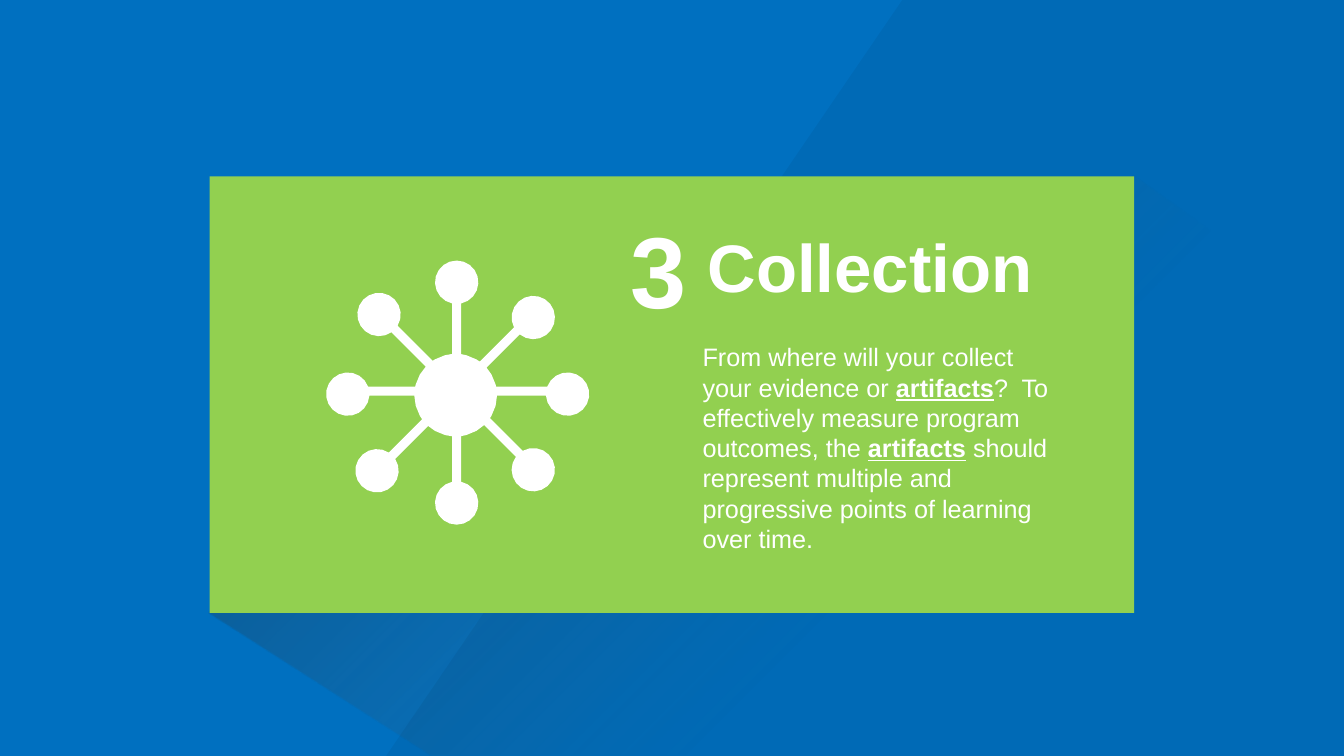
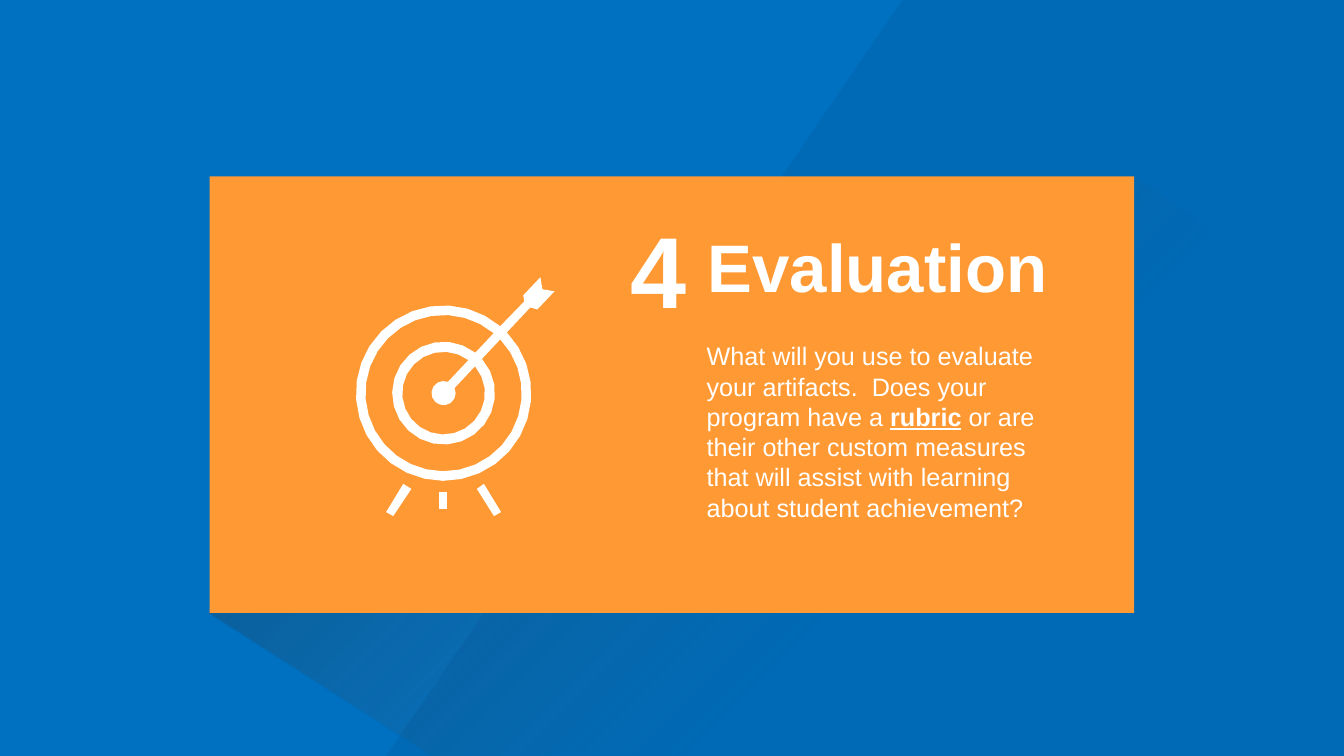
import math

from lxml import etree
from pptx import Presentation
from pptx import util as u
from pptx.dml.color import RGBColor
from pptx.enum import shapes, text
from pptx.oxml import parse_xml
from pptx.oxml.ns import nsdecls, qn

COLORS = {
    "background": "0070C0",
    "collection": "92D050",
    "evaluation": "FF9933",
    "white": "FFFFFF",
    "black": "000000",
    "gray": "6B6B6B",
}
FONT = "Arial"
HALF_STROKE = 0.045


def rgb(name):
    return RGBColor.from_string(COLORS[name])


def inches(*lengths):
    return [u.Inches(length) for length in lengths]


def style_shape(shape, fill):
    shape.shadow.inherit = False
    shape.fill.solid()
    shape.fill.fore_color.rgb = rgb(fill)
    shape.line.fill.background()
    return shape


def add_panel(slide, fill):
    panel = slide.shapes.add_shape(
        shapes.MSO_SHAPE.RECTANGLE, *inches(2.08, 1.75, 9.17, 4.33))
    style_shape(panel, fill)


def add_outline(slide, fill, *contours):
    """Draw closed contours as one shape; inner contours are holes."""
    builder = None
    for contour in contours:
        start, *rest = [inches(*point) for point in contour]
        if builder is None:
            builder = slide.shapes.build_freeform(*start)
        else:
            builder.move_to(*start)
        builder.add_line_segments(rest, close=True)
    return style_shape(builder.convert_to_shape(), fill)


def arc(center, radius, start, end, steps):
    """Points from angle start to angle end, clockwise, in radians."""
    angles = [start + (end - start) * step / steps for step in range(steps + 1)]
    return [(center[0] + radius * math.cos(angle), center[1] + radius * math.sin(angle))
            for angle in angles]


def set_alpha(shape, percent):
    color = shape.element.spPr.find(qn("a:solidFill"))[0]
    etree.SubElement(color, qn("a:alpha"), val=str(percent * 1000))


def set_gradient(shape, stops, angle):
    """Fill with (position, color, opacity) stops, all in percent."""
    stop_xml = "".join(
        f'<a:gs pos="{position * 1000}"><a:srgbClr val="{COLORS[color]}">'
        f'<a:alpha val="{opacity * 1000}"/></a:srgbClr></a:gs>'
        for position, color, opacity in stops)
    gradient = parse_xml(
        f'<a:gradFill {nsdecls("a")} rotWithShape="1"><a:gsLst>{stop_xml}</a:gsLst>'
        f'<a:lin ang="{angle * 60000}" scaled="0"/></a:gradFill>')
    props = shape.element.spPr
    props.replace(props.find(qn("a:solidFill")), gradient)


def write_text(shape, content, size, bold=False, wrap=True):
    """Write one paragraph; words between asterisks are bold and underlined."""
    frame = shape.text_frame
    frame.word_wrap = wrap
    frame.auto_size = text.MSO_AUTO_SIZE.SHAPE_TO_FIT_TEXT
    frame.vertical_anchor = text.MSO_ANCHOR.TOP
    paragraph = frame.paragraphs[0]
    paragraph.alignment = text.PP_ALIGN.LEFT
    for index, part in enumerate(content.split("*")):
        emphasized = index % 2 == 1
        run = paragraph.add_run()
        run.text = part
        run.font.name = FONT
        run.font.size = u.Pt(size)
        run.font.color.rgb = rgb("white")
        run.font.bold = bold or emphasized
        run.font.underline = emphasized


def add_text(slide, box, content, **style):
    write_text(slide.shapes.add_textbox(*inches(*box)), content, **style)


def set_title(slide, content, width):
    title = slide.shapes.title
    title.left, title.top, title.width, title.height = inches(6.92, 2.19, width, 0.91)
    write_text(title, content, size=48, bold=True, wrap=False)
    title.element.getparent().append(title.element)  # in front of the panel


def add_backdrop(slide):
    panel_shadow = add_outline(
        slide, "black",
        [(10.13, 4.52), (2.07, 6.08), (4.28, 7.5), (13.33, 7.5), (13.33, 3.22),
         (11.24, 1.74)])
    set_gradient(panel_shadow, [(0, "black", 40), (62, "gray", 0)], 45)
    diagonal_shade = add_outline(
        slide, "black", [(3.83, 7.5), (8.95, 0), (13.33, 0), (13.33, 7.5)])
    set_alpha(diagonal_shade, 5)


def spoke_meets_circle(origin, angle, side, center, radius, far):
    """Where one edge of a spoke (side -1 or 1) crosses a circle, near or far."""
    cos, sin = math.cos(angle), math.sin(angle)
    x = origin[0] - side * HALF_STROKE * sin
    y = origin[1] + side * HALF_STROKE * cos
    dx, dy = center[0] - x, center[1] - y
    half_chord = math.sqrt(radius ** 2 - (dy * cos - dx * sin) ** 2)
    along = dx * cos + dy * sin + (half_chord if far else -half_chord)
    return x + along * cos, y + along * sin


def draw_network(slide):
    origin = (4.53, 3.88)
    hub, hub_radius, node_radius = (4.52, 3.92), 0.41, 0.215
    nodes = [(5.63, 3.91), (5.29, 4.66), (4.53, 4.99), (3.74, 4.67),
             (3.45, 3.91), (3.76, 3.12), (4.53, 2.8), (5.29, 3.15)]
    outline = []
    for step, node in enumerate(nodes):
        angle = step * math.pi / 4
        leave, back = [spoke_meets_circle(origin, angle, side, hub, hub_radius, True)
                       for side in (-1, 1)]
        start, end = [
            math.atan2(y - node[1], x - node[0])
            for x, y in (spoke_meets_circle(origin, angle, side, node, node_radius, False)
                         for side in (-1, 1))]
        sweep = (end - start) % math.tau
        outline += [leave, *arc(node, node_radius, start, start + sweep, 18), back]
        outline += arc(hub, hub_radius, angle + math.pi / 12, angle + math.pi / 6, 1)
    add_outline(slide, "white", outline)


def draw_target(slide):
    center, shaft_angle = (4.4, 3.9), math.radians(-46.8)

    def open_ring(radius, steps):
        """Circle points that leave a gap for the shaft."""
        gap = math.asin(HALF_STROKE / radius)
        return arc(center, radius, shaft_angle + gap,
                   shaft_angle + math.tau - gap, steps)

    fletching = [(5.2, 2.99), (5.19, 2.93), (5.36, 2.75), (5.38, 2.87),
                 (5.5, 2.89), (5.33, 3.07), (5.26, 3.05)]
    add_outline(
        slide, "white",
        open_ring(0.41, 21) + open_ring(0.12, 12)[::-1],
        open_ring(0.775, 29) + open_ring(0.51, 22)[::-1],
        open_ring(0.87, 29) + fletching)
    legs = [[(4, 4.8), (4.08, 4.85), (3.9, 5.12), (3.83, 5.08)],
            [(4.35, 4.88), (4.43, 4.88), (4.43, 5.05), (4.35, 5.05)],
            [(4.8, 4.8), (4.97, 5.08), (4.9, 5.12), (4.73, 4.85)]]
    for leg in legs:
        add_outline(slide, "white", leg)


def add_step(prs, number, title, title_width, body, body_box, fill, draw_icon):
    slide = prs.slides.add_slide(prs.slide_layouts[5])
    add_backdrop(slide)
    add_panel(slide, fill)
    set_title(slide, title, title_width)
    add_text(slide, body_box, body, size=18)
    add_text(slide, (6.16, 2.01, 0.76, 1.31), number, size=72, bold=True, wrap=False)
    draw_icon(slide)


def main():
    prs = Presentation()
    prs.slide_width, prs.slide_height = inches(13.33, 7.5)
    background = prs.slide_master.background.fill
    background.solid()
    background.fore_color.rgb = rgb("background")

    add_step(
        prs, "3", "Collection", 3.46,
        "From where will your collect your evidence or *artifacts*?  To effectively "
        "measure program outcomes, the *artifacts* should represent multiple and "
        "progressive points of learning over time.",
        (6.87, 3.34, 3.75, 2.22), "collection", draw_network)
    add_step(
        prs, "4", "Evaluation", 3.61,
        "What will you use to evaluate your artifacts.  Does your program have a "
        "*rubric* or are their other custom measures that will assist with learning "
        "about student achievement?",
        (6.91, 3.33, 3.75, 1.92), "evaluation", draw_target)
    prs.save("out.pptx")


if __name__ == "__main__":
    main()
